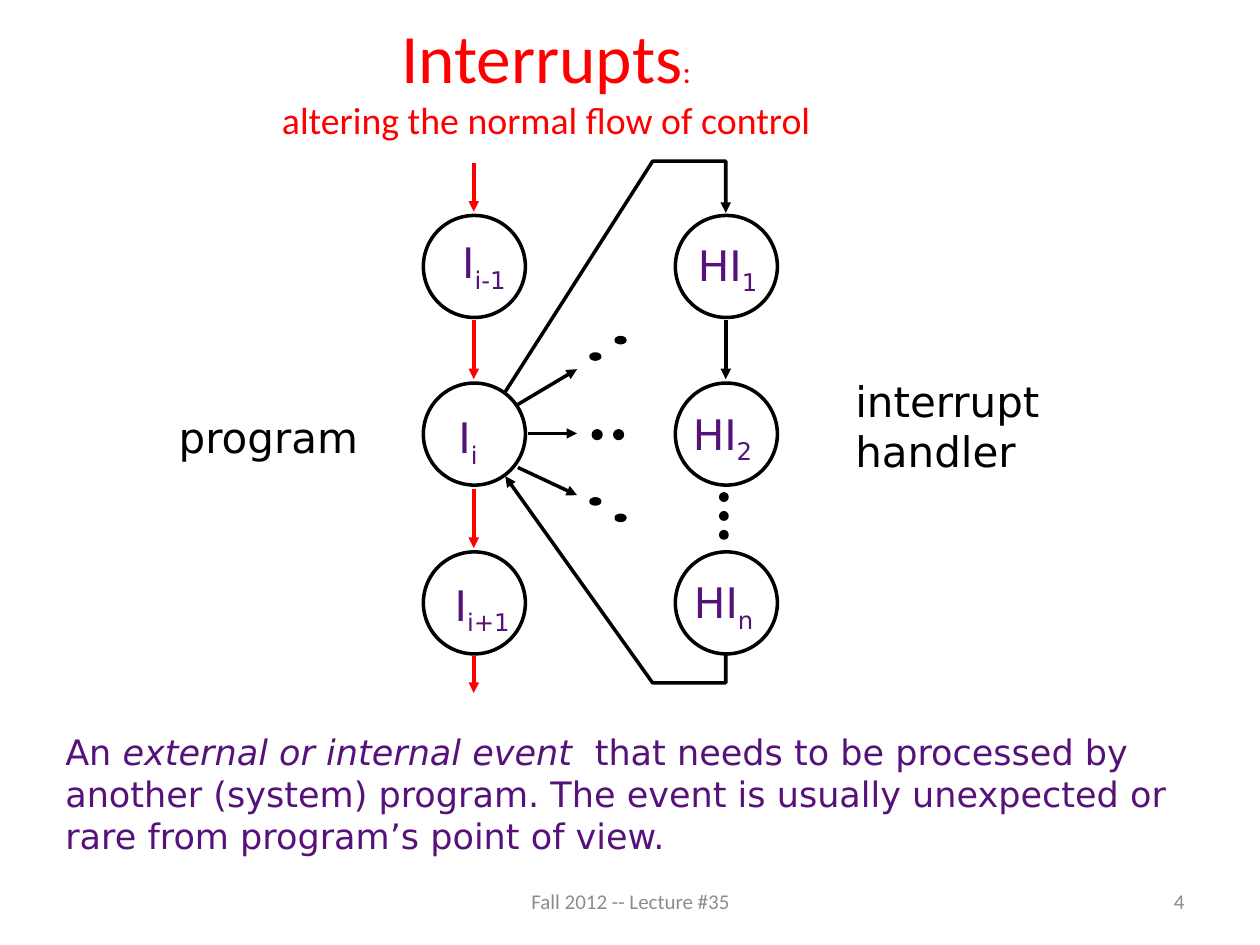
from pptx import Presentation
from pptx.dml.color import RGBColor
from pptx.enum.shapes import MSO_CONNECTOR as CONN, MSO_SHAPE as SHAPE
from pptx.enum.text import MSO_ANCHOR as ANCHOR, MSO_AUTO_SIZE as AUTO, PP_ALIGN as ALIGN
from pptx.oxml.ns import qn
from pptx.util import Inches, Pt
from lxml.etree import SubElement

BLACK, RED, PURPLE, GREY, WHITE = "000000", "FF0000", "56127A", "8C8C8C", "FFFFFF"
BODY, HEAD = "DejaVu Sans", "Calibri"

# Content: title runs, with None for a line break
TITLE = [("Interrupts", 39.6), (":", 18), None, ("altering the normal flow of control", 21.6)]

# Circles: two columns by three rows, each with text, subscript and label position
PROGRAM_X, HANDLER_X = 3.36, 5.36
ROWS = [1.71, 3.04, 4.38]
SIZE = 0.81
LABELS = [
    ("I", "i-1", 3.57, 1.83, 0.64), ("I", "i", 3.54, 3.22, 0.4), ("I", "i+1", 3.51, 4.55, 0.72),
    ("HI", "1", 5.44, 1.85, 0.73), ("HI", "2", 5.4, 3.19, 0.73), ("HI", "n", 5.41, 4.53, 0.73),
]

# Straight arrows: colour, start, end
ARROWS = [(RED, (3.76, top), (3.76, bottom)) for top, bottom in
          [(1.29, 1.68), (2.54, 3.01), (3.88, 4.35), (5.21, 5.5)]]
ARROWS += [
    (BLACK, (5.76, 2.54), (5.76, 3.01)),
    (BLACK, (4.11, 3.21), (4.58, 2.93)),
    (BLACK, (4.19, 3.44), (4.58, 3.44)),
    (BLACK, (4.11, 3.71), (4.58, 3.93)),
]

# Bent arrows to and from the handler: points, arrowhead end
BENT = [
    ([(4.01, 3.11), (5.18, 1.28), (5.76, 1.28), (5.76, 1.69)], "tailEnd"),
    ([(4.01, 3.78), (5.18, 5.42), (5.76, 5.42), (5.76, 5.04)], "headEnd"),
]

# Ellipsis dots: width, height, positions
DOTS = [
    (0.07, 0.04, [(4.69, 2.81), (4.89, 2.68), (4.69, 3.96), (4.89, 4.09)]),
    (0.06, 0.06, [(4.71, 3.42), (4.88, 3.42)]),
    (0.05, 0.05, [(5.72, 3.92 + 0.15 * i) for i in range(3)]),
]

# Text boxes: place, paragraphs of (text, style) runs, font, size, colour, alignment, wrap, anchor
TEXTS = [
    ((1.32, 3.22, 1.62, 0.5), [[("program", "")]],
     BODY, 24, BLACK, ALIGN.LEFT, False, ANCHOR.TOP),
    ((6.69, 2.93, 1.78, 0.9), [[("interrupt", "")], [("handler", "")]],
     BODY, 24, BLACK, ALIGN.LEFT, False, ANCHOR.TOP),
    ((0.42, 5.75, 9.17, 1.1),
     [[("An ", ""), ("external or internal event", "italic"),
       ("  that needs to be processed by another (system) program. "
        "The event is usually unexpected or rare from program’s point of view.", "")]],
     BODY, 20, PURPLE, ALIGN.LEFT, True, ANCHOR.TOP),
    ((3.42, 6.95, 3.17, 0.4), [[("Fall 2012 -- Lecture #35", "")]],
     HEAD, 12, GREY, ALIGN.CENTER, True, ANCHOR.MIDDLE),
    ((7.17, 6.95, 2.33, 0.4), [[("4", "")]],
     HEAD, 12, GREY, ALIGN.RIGHT, True, ANCHOR.MIDDLE),
]
TEXTS += [((x, y, w, 0.5), [[(base, ""), (sub, "sub")]],
           BODY, 24, PURPLE, ALIGN.LEFT, False, ANCHOR.TOP) for base, sub, x, y, w in LABELS]


def rgb(colour):
    return RGBColor.from_string(colour)


def set_font(font, name, size, colour):
    font.name, font.size = name, Pt(size)
    font.color.rgb = rgb(colour)


def set_line(sp, colour, arrow=None):
    sp.line.color.rgb = rgb(colour)
    sp.line.width = Pt(2)
    if arrow:
        SubElement(sp.line._get_or_add_ln(), qn(f"a:{arrow}"), type="triangle")


def add_arrow(s, colour, start, end):
    line = s.shapes.add_connector(CONN.STRAIGHT, *map(Inches, start + end))
    set_line(line, colour, "tailEnd")
    SubElement(line._element.spPr, qn("a:effectLst"))


def add_bent_arrow(s, points, arrow):
    points = [(Inches(x), Inches(y)) for x, y in points]
    builder = s.shapes.build_freeform(*points[0])
    builder.add_line_segments(points[1:], close=False)
    sp = builder.convert_to_shape()
    sp.shadow.inherit = False
    sp.fill.background()
    set_line(sp, BLACK, arrow)


def add_ellipse(s, x, y, w, h, fill=None):
    sp = s.shapes.add_shape(SHAPE.OVAL, *map(Inches, (x, y, w, h)))
    sp.shadow.inherit = False
    if fill:
        sp.fill.solid()
        sp.fill.fore_color.rgb = rgb(fill)
    else:
        sp.fill.background()
    set_line(sp, BLACK)


def add_text(s, place, paragraphs, font, size, colour, align, wrap, anchor):
    tf = s.shapes.add_textbox(*map(Inches, place)).text_frame
    tf.word_wrap, tf.vertical_anchor = wrap, anchor
    for i, runs in enumerate(paragraphs):
        p = tf.add_paragraph() if i else tf.paragraphs[0]
        p.alignment = align
        set_font(p.font, font, size, colour)
        for text, style in runs:
            r = p.add_run()
            r.text = text
            if style == "italic":
                r.font.italic = True
            elif style == "sub":
                r._r.get_or_add_rPr().set("baseline", "-25000")


def add_title(s):
    title = s.shapes.title
    title.left, title.top, title.width, title.height = map(Inches, (0.42, 0.08, 7.83, 1.08))
    tf = title.text_frame
    tf.auto_size, tf.vertical_anchor = AUTO.NONE, ANCHOR.MIDDLE
    p = tf.paragraphs[0]
    p.alignment = ALIGN.CENTER
    for part in TITLE:
        if part is None:
            p.add_line_break()
            continue
        r = p.add_run()
        r.text, size = part
        set_font(r.font, HEAD, size, RED)


def main():
    prs = Presentation()
    prs.slide_width, prs.slide_height = Inches(10), Inches(7.5)
    s = prs.slides.add_slide(prs.slide_layouts[5])
    add_title(s)

    # Flow of control
    for points, arrow in BENT:
        add_bent_arrow(s, points, arrow)
    for colour, start, end in ARROWS:
        add_arrow(s, colour, start, end)

    # Instructions; the last handler circle covers the line behind it
    for x in (PROGRAM_X, HANDLER_X):
        for y in ROWS:
            last = (x, y) == (HANDLER_X, ROWS[-1])
            add_ellipse(s, x, y, SIZE, SIZE, WHITE if last else None)
    for w, h, places in DOTS:
        for x, y in places:
            add_ellipse(s, x, y, w, h, BLACK)

    # Labels, explanation and footer
    for text in TEXTS:
        add_text(s, *text)
    prs.save("out.pptx")


if __name__ == "__main__":
    main()
